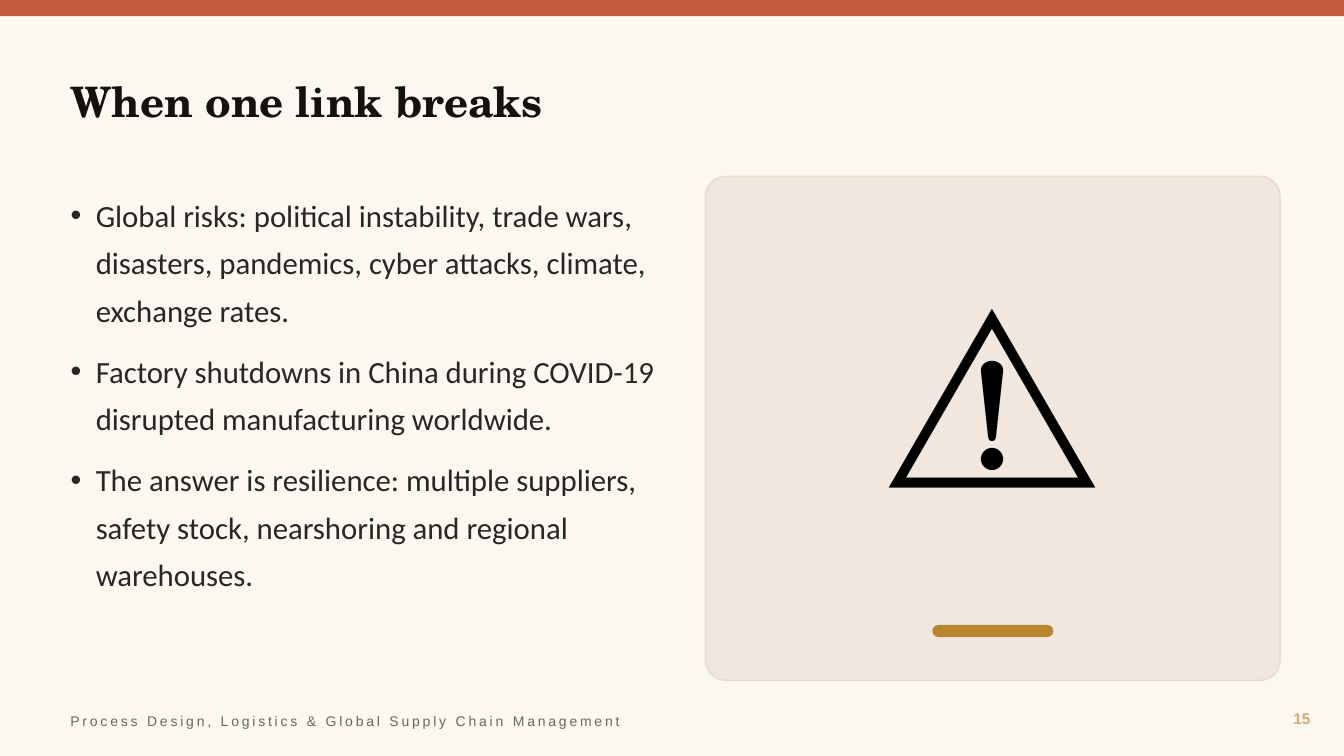
from lxml.etree import SubElement
from pptx import Presentation
from pptx.dml.color import RGBColor
from pptx.enum.shapes import MSO_SHAPE
from pptx.enum.text import MSO_ANCHOR, MSO_AUTO_SIZE, PP_ALIGN
from pptx.oxml.ns import qn
from pptx.util import Inches, Pt

CREAM = RGBColor(0xFB, 0xF7, 0xF1)
BRICK = RGBColor(0xC4, 0x5A, 0x3D)
INK = RGBColor(0x16, 0x11, 0x0D)
CHARCOAL = RGBColor(0x2A, 0x26, 0x22)
BLACK = RGBColor(0x00, 0x00, 0x00)
BLUSH = RGBColor(0xF2, 0xE7, 0xDE)
SAND = RGBColor(0xE4, 0xDD, 0xD0)
OCHRE = RGBColor(0xB8, 0x86, 0x2F)
TAN = RGBColor(0xD9, 0xA8, 0x6C)
TAUPE = RGBColor(0x6E, 0x66, 0x5C)

RISKS = [
    "Global risks: political instability, trade wars, disasters, pandemics, "
    "cyber attacks, climate, exchange rates.",
    "Factory shutdowns in China during COVID-19 disrupted manufacturing worldwide.",
    "The answer is resilience: multiple suppliers, safety stock, nearshoring "
    "and regional warehouses.",
]


class Deck:
    COL = ROW = Inches(0.1)
    COLS, ROWS = 133.33, 75
    STYLES = {
        "title": dict(name="TeX Gyre Schola", size=Pt(30), bold=True, color=INK),
        "body": dict(name="Calibri", size=Pt(22), color=CHARCOAL),
        "icon": dict(name="Calibri", size=Pt(150), color=BLACK),
        "number": dict(name="Arial", size=Pt(11), bold=True, color=TAN),
        "footer": dict(name="Arial", size=Pt(10), color=TAUPE),
    }

    def __init__(self):
        self.prs = Presentation()
        self.prs.slide_width = int(self.COLS * self.COL)
        self.prs.slide_height = int(self.ROWS * self.ROW)
        self.s = self.prs.slides.add_slide(self.prs.slide_layouts[1])
        self.s.background.fill.solid()
        self.s.background.fill.fore_color.rgb = CREAM

    def box(self, col, row, cols, rows):
        return [int(n) for n in (col * self.COL, row * self.ROW,
                                 cols * self.COL, rows * self.ROW)]

    def place(self, sp, cell):
        sp.left, sp.top, sp.width, sp.height = self.box(*cell)

    def fill_text(self, sp, lines, style, align=PP_ALIGN.LEFT, anchor=MSO_ANCHOR.MIDDLE):
        tf = sp.text_frame
        tf.word_wrap = True
        tf.auto_size = MSO_AUTO_SIZE.NONE
        tf.vertical_anchor = anchor
        for i, line in enumerate(lines):
            p = tf.add_paragraph() if i else tf.paragraphs[0]
            p.alignment = align
            r = p.add_run()
            r.text = line
            for key, value in self.STYLES[style].items():
                if key == "color":
                    r.font.color.rgb = value
                else:
                    setattr(r.font, key, value)
        return tf

    def title(self, text, cell):
        self.place(self.s.shapes.title, cell)
        self.fill_text(self.s.shapes.title, [text], "title")

    def bullets(self, lines, cell):
        sp = self.s.placeholders[1]
        self.place(sp, cell)
        tf = self.fill_text(sp, lines, "body", anchor=MSO_ANCHOR.TOP)
        spacing = dict(line_spacing=1.28, space_before=Pt(0), space_after=Pt(10))
        for p in tf.paragraphs:
            pPr = p._p.get_or_add_pPr()
            pPr.set("marL", str(Inches(0.25)))
            pPr.set("indent", str(-Inches(0.25)))
            SubElement(pPr, qn("a:buChar"), char="•")
            for key, value in spacing.items():
                setattr(p, key, value)

    def text(self, text, cell, style, align=PP_ALIGN.LEFT, tracking=None):
        sp = self.s.shapes.add_textbox(*self.box(*cell))
        tf = self.fill_text(sp, [text], style, align)
        if tracking:
            rPr = tf.paragraphs[0].runs[0]._r.get_or_add_rPr()
            rPr.set("spc", str(tracking * 100))

    def shape(self, kind, cell, fill, line=None, radius=None):
        sp = self.s.shapes.add_shape(kind, *self.box(*cell))
        sp.shadow.inherit = False
        sp.fill.solid()
        sp.fill.fore_color.rgb = fill
        if line is None:
            sp.line.fill.background()
        else:
            sp.line.color.rgb = line
            sp.line.width = Pt(1)
        if radius is not None:
            sp.adjustments[0] = radius


def main():
    deck = Deck()
    deck.shape(MSO_SHAPE.RECTANGLE, (0, 0, deck.COLS, 1.6), BRICK)
    deck.title("When one link breaks", (6, 5, 121, 10))
    deck.shape(MSO_SHAPE.ROUNDED_RECTANGLE, (70, 17.5, 57, 50), BLUSH, SAND, 0.04)
    deck.text("⚠️", (70, 17.5, 57, 41), "icon", PP_ALIGN.CENTER)
    deck.shape(MSO_SHAPE.ROUNDED_RECTANGLE, (92.5, 62, 12, 1.2), OCHRE, radius=0.5)
    deck.bullets(RISKS, (6, 18, 60, 50))
    deck.text("15", (122, 69.5, 9, 3.5), "number", PP_ALIGN.RIGHT)
    deck.text("Process Design, Logistics & Global Supply Chain Management",
              (6, 70, 80, 3), "footer", tracking=2)
    deck.prs.save("out.pptx")


if __name__ == "__main__":
    main()
